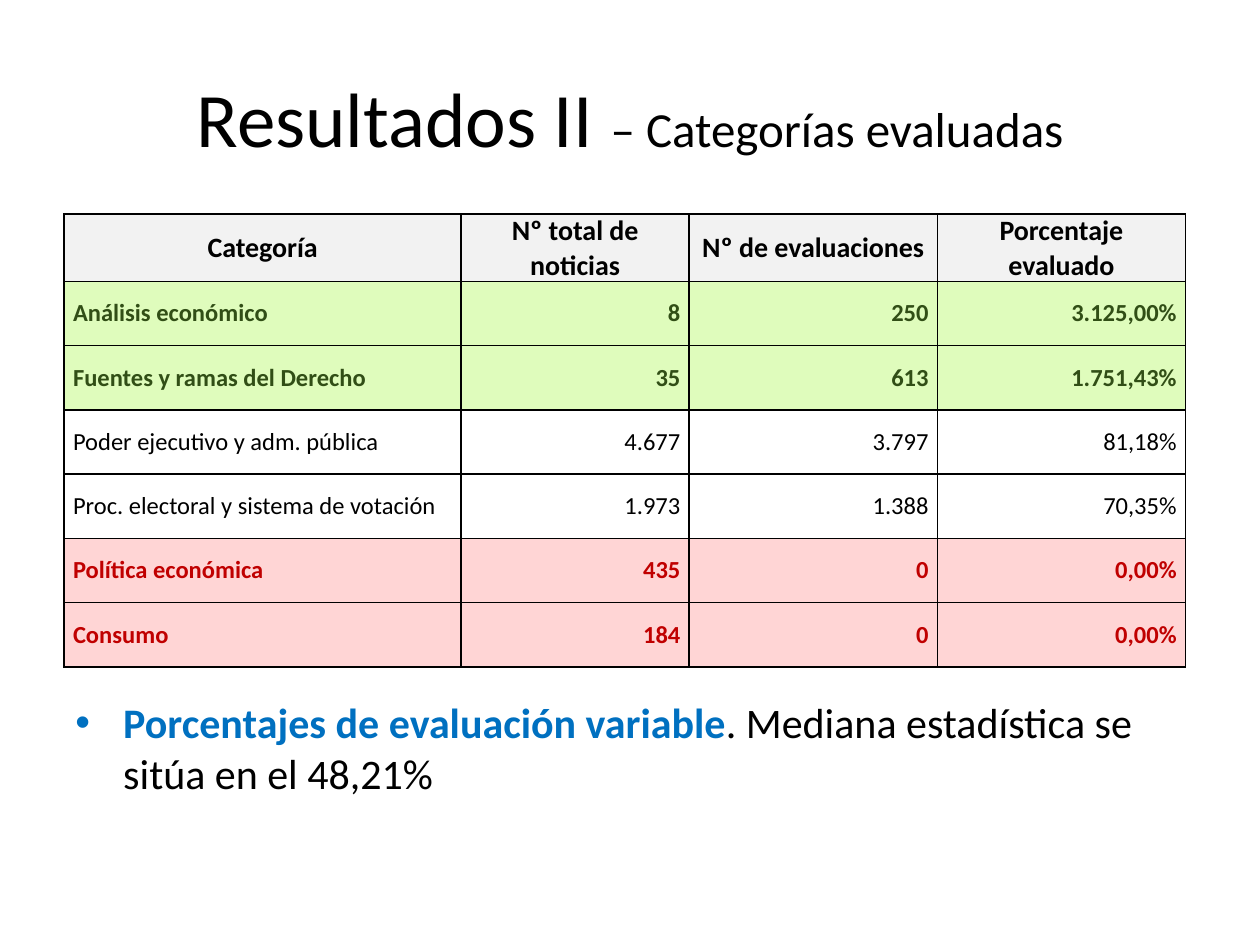
from lxml import etree
from pptx import Presentation
from pptx import util as u
from pptx.dml.color import RGBColor
from pptx.enum import text
from pptx.oxml import ns

COLORS = {
    "ink": "000000", "header": "F2F2F2", "blue": "0070C0",
    "high": "DFFCBC", "high_ink": "314E16",
    "low": "FFD5D5", "low_ink": "C00000",
}
STYLES = {
    "header": {"fill": "header", "ink": "ink", "size": 16, "bold": True},
    "high": {"fill": "high", "ink": "high_ink", "size": 14, "bold": True},
    "middle": {"fill": None, "ink": "ink", "size": 14, "bold": False},
    "low": {"fill": "low", "ink": "low_ink", "size": 14, "bold": True},
}
ROWS = [
    ("header", "Categoría", "Nº total de noticias", "Nº de evaluaciones", "Porcentaje evaluado"),
    ("high", "Análisis económico", "8", "250", "3.125,00%"),
    ("high", "Fuentes y ramas del Derecho", "35", "613", "1.751,43%"),
    ("middle", "Poder ejecutivo y adm. pública", "4.677", "3.797", "81,18%"),
    ("middle", "Proc. electoral y sistema de votación", "1.973", "1.388", "70,35%"),
    ("low", "Política económica", "435", "0", "0,00%"),
    ("low", "Consumo", "184", "0", "0,00%"),
]
COLUMN_WIDTHS = [3.15, 1.81, 1.97, 1.97]
TITLE_BOX = (0.5, 0.3, 9, 1.25)
TABLE_BOX = (0.51, 1.7, 8.9, 3.57)
NOTE_BOX = (0.5, 5.48, 9, 1.22)


def set_attributes(target, values):
    for name, value in values.items():
        setattr(target, name, value)


def inches(box):
    return [u.Inches(length) for length in box]


def add_run(paragraph, words, size, color="ink", bold=False):
    run = paragraph.add_run()
    run.text = words
    set_attributes(run.font, {"name": "Calibri", "size": u.Pt(size), "bold": bold})
    run.font.color.rgb = RGBColor.from_string(COLORS[color])


def place_title(slide, box):
    title = slide.shapes.title
    set_attributes(title, dict(zip(("left", "top", "width", "height"), inches(box))))
    title.text_frame.vertical_anchor = text.MSO_ANCHOR.MIDDLE
    paragraph = title.text_frame.paragraphs[0]
    paragraph.alignment = text.PP_ALIGN.CENTER
    add_run(paragraph, "Resultados II ", 44)
    add_run(paragraph, "– Categorías evaluadas", 28)


def add_borders(cell):
    properties = cell._tc.get_or_add_tcPr()
    for side in ("lnL", "lnR", "lnT", "lnB"):
        line = etree.SubElement(properties, ns.qn(f"a:{side}"), w=str(u.Pt(1)))
        fill = etree.SubElement(line, ns.qn("a:solidFill"))
        etree.SubElement(fill, ns.qn("a:srgbClr"), val=COLORS["ink"])


def format_cell(cell, words, style, alignment):
    set_attributes(cell, {
        "margin_left": u.Inches(0.07), "margin_right": u.Inches(0.07),
        "margin_top": 0, "margin_bottom": 0,
        "vertical_anchor": text.MSO_ANCHOR.MIDDLE,
    })
    add_borders(cell)
    if style["fill"]:
        cell.fill.solid()
        cell.fill.fore_color.rgb = RGBColor.from_string(COLORS[style["fill"]])
    else:
        cell.fill.background()
    paragraph = cell.text_frame.paragraphs[0]
    paragraph.alignment = alignment
    add_run(paragraph, words, style["size"], style["ink"], style["bold"])


def place_table(slide, box):
    table = slide.shapes.add_table(len(ROWS), len(COLUMN_WIDTHS), *inches(box)).table
    set_attributes(table, {"first_row": False, "horz_banding": False})
    for column, width in zip(table.columns, COLUMN_WIDTHS):
        column.width = u.Inches(width)
    for row, (kind, *entries) in enumerate(ROWS):
        for column, words in enumerate(entries):
            if kind == "header":
                alignment = text.PP_ALIGN.CENTER
            else:
                alignment = text.PP_ALIGN.RIGHT if column else text.PP_ALIGN.LEFT
            format_cell(table.cell(row, column), words, STYLES[kind], alignment)


def place_note(slide, box):
    frame = slide.shapes.add_textbox(*inches(box)).text_frame
    frame.word_wrap = True
    paragraph = frame.paragraphs[0]
    properties = paragraph._p.get_or_add_pPr()
    indent = u.Inches(0.38)
    properties.set("marL", str(indent))
    properties.set("indent", str(-indent))
    etree.SubElement(properties, ns.qn("a:buFont"), typeface="Arial")
    etree.SubElement(properties, ns.qn("a:buChar"), char="•")
    add_run(paragraph, "Porcentajes de evaluación variable", 24, "blue", True)
    add_run(paragraph, ". Mediana estadística se sitúa en el 48,21%", 24)


def main():
    presentation = Presentation()
    set_attributes(presentation, {"slide_width": u.Inches(10), "slide_height": u.Inches(7.5)})
    slide = presentation.slides.add_slide(presentation.slide_layouts.get_by_name("Title Only"))
    place_title(slide, TITLE_BOX)
    place_note(slide, NOTE_BOX)
    place_table(slide, TABLE_BOX)
    presentation.save("out.pptx")


if __name__ == "__main__":
    main()
